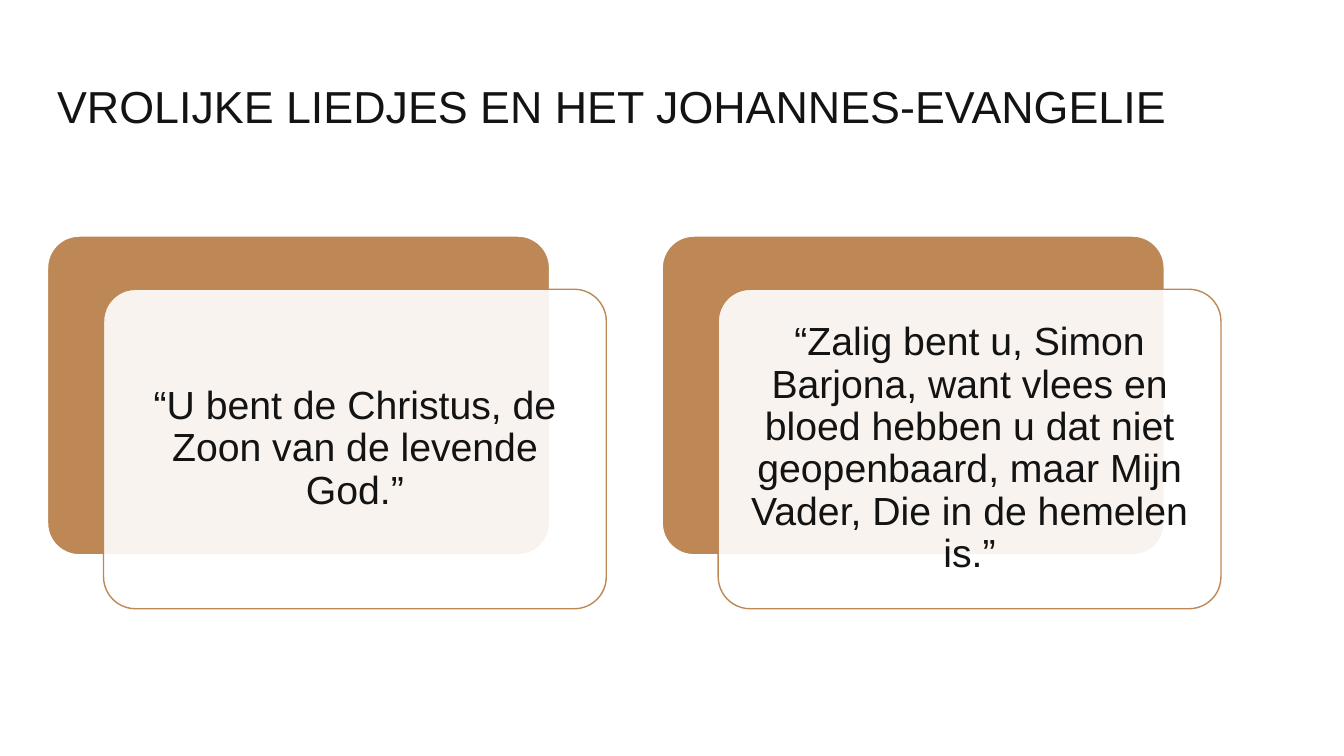
from lxml import etree
from pptx import Presentation
from pptx.dml.color import RGBColor
from pptx.enum import shapes, text
from pptx.oxml.ns import qn
from pptx.util import Cm, Pt

INK, BROWN, WHITE = "131313", "BE8856", "FFFFFF"
CARD_WIDTH, CARD_HEIGHT = 12.67, 8.05


def color(value):
    return RGBColor.from_string(value)


def add_card(left, top, fill, line, line_width):
    card = slide.shapes.add_shape(
        shapes.MSO_SHAPE.ROUNDED_RECTANGLE,
        Cm(left), Cm(top), Cm(CARD_WIDTH), Cm(CARD_HEIGHT))
    card.adjustments[0] = 0.1
    card.shadow.inherit = False
    card.fill.solid()
    card.fill.fore_color.rgb = color(fill)
    card.line.color.rgb = color(line)
    card.line.width = Pt(line_width)
    return card


presentation = Presentation()
presentation.slide_width = Cm(33.87)
presentation.slide_height = Cm(19.05)
slide = presentation.slides.add_slide(presentation.slide_layouts[6])

# Title
title = slide.shapes.add_textbox(Cm(1.19), Cm(0.79), Cm(29.59), Cm(2.69))
title.text_frame.word_wrap = True
title.text_frame.vertical_anchor = text.MSO_ANCHOR.BOTTOM
paragraph = title.text_frame.paragraphs[0]
paragraph.text = "VROLIJKE LIEDJES EN HET JOHANNES-EVANGELIE"
paragraph.line_spacing = 0.9
paragraph.font.name = "Arial"
paragraph.font.size = Pt(32)
paragraph.font.color.rgb = color(INK)

# Quotes: a brown card with a translucent white card in front
quotes = [
    "“U bent de Christus, de Zoon van de levende God.”",
    "“Zalig bent u, Simon Barjona, want vlees en bloed hebben u dat niet "
    "geopenbaard, maar Mijn Vader, Die in de hemelen is.”",
]
for index, quote in enumerate(quotes):
    left = 1.19 + index * 15.49
    add_card(left, 5.94, BROWN, WHITE, 1.5)
    front = add_card(left + 1.42, 7.29, WHITE, BROWN, 1)

    # 90 % opaque fill
    fill_color = front.fill._xPr.find(qn("a:solidFill"))[0]
    etree.SubElement(fill_color, qn("a:alpha"), val="90000")

    frame = front.text_frame
    frame.word_wrap = True
    frame.vertical_anchor = text.MSO_ANCHOR.MIDDLE
    frame.margin_left = frame.margin_right = Cm(0.3)
    frame.margin_top = frame.margin_bottom = Cm(0.3)
    paragraph = frame.paragraphs[0]
    paragraph.text = quote
    paragraph.alignment = text.PP_ALIGN.CENTER
    paragraph.line_spacing = 0.9
    paragraph.font.name = "Arial"
    paragraph.font.size = Pt(28)
    paragraph.font.color.rgb = color(INK)

presentation.save("out.pptx")
